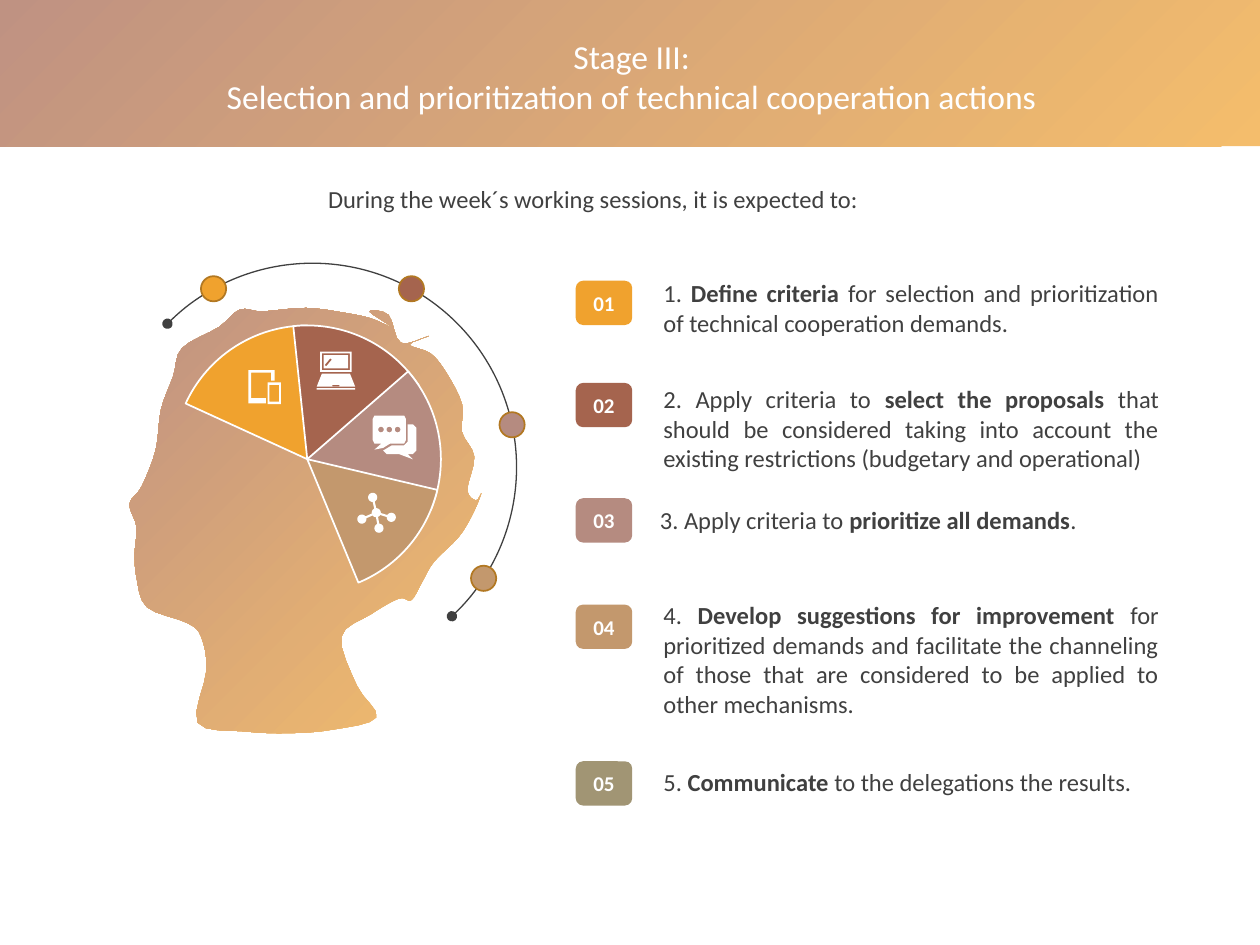
from math import cos, sin, radians

from lxml.etree import SubElement
from pptx import Presentation
from pptx.dml.color import RGBColor
from pptx.enum.shapes import MSO_SHAPE as Kind
from pptx.enum.text import MSO_ANCHOR as Anchor, MSO_AUTO_SIZE as Fit, PP_ALIGN as Align
from pptx.oxml.ns import qn
from pptx.util import Pt

GOLD = RGBColor(0xF0, 0xA2, 0x2E)
RUST = RGBColor(0xA5, 0x64, 0x4E)
ROSE = RGBColor(0xB5, 0x8B, 0x80)
TAN = RGBColor(0xC3, 0x98, 0x6D)
OLIVE = RGBColor(0xA1, 0x95, 0x74)
BRONZE = RGBColor(0xB2, 0x78, 0x22)
GREY = RGBColor(0x40, 0x40, 0x40)
WHITE = RGBColor(0xFF, 0xFF, 0xFF)

HEAD = [
    (74, 288), (81, 278), (89, 257), (92, 234), (99, 215), (104, 199), (125, 187),
    (137, 177), (150, 178), (175, 176), (198, 179), (212, 182), (224, 187),
    (211, 178), (222, 180), (229, 196), (245, 192), (234, 197), (246, 202),
    (255, 213), (264, 231), (264, 247), (271, 261), (267, 280), (272, 286),
    (275, 282), (270, 294), (262, 307), (248, 321), (241, 333), (235, 343),
    (228, 342), (212, 351), (195, 364), (204, 392), (215, 410), (190, 417),
    (165, 419), (140, 418), (113, 413), (118, 383), (115, 364), (107, 356),
    (84, 347), (78, 330), (77, 316), (78, 301)]


def curve(points, steps=4):
    """Round off a closed loop with a spline through its points."""
    loop = []
    for i, (b, c) in enumerate(zip(points, points[1:] + points[:1])):
        a, d = points[i - 1], points[(i + 2) % len(points)]
        for t in (k / steps for k in range(steps)):
            loop.append([q + t / 2 * (r - p + t * (2 * p - 5 * q + 4 * r - s
                                                   + t * (3 * q - 3 * r + s - p)))
                         for p, q, r, s in zip(a, b, c, d)])
    return loop


def polar(x, y, size, angle):
    return x + size * cos(radians(angle)), y + size * sin(radians(angle))


def ring(x, y, size):
    return [polar(x, y, size, angle) for angle in range(0, 360, 15)]


def box(left, top, wide, high):
    right, low = left + wide, top + high
    return [(left, top), (right, top), (right, low), (left, low)]


def link(x, y, angle, near, far):
    """Thin bar that points away from a centre."""
    return [polar(*polar(x, y, size, angle), 0.6, angle + turn)
            for size, turn in ((near, 90), (far, 90), (far, -90), (near, -90))]


class Deck:
    font = "Calibri"

    def __init__(self):
        self.file = Presentation()
        self.file.slide_width, self.file.slide_height = Pt(720), Pt(540)
        self.slide = self.file.slides.add_slide(self.file.slide_layouts[5])
        self.shapes = self.slide.shapes

    def paint(self, shape, fill=None, line=None, width=1):
        shape.shadow.inherit = False
        if fill is None:
            shape.fill.background()
        else:
            shape.fill.solid()
            shape.fill.fore_color.rgb = fill
        if line is None:
            shape.line.fill.background()
        else:
            shape.line.color.rgb = line
            shape.line.width = Pt(width)
        return shape

    def blend(self, shape):
        """Fill with the slanted, partly clear gold to rust gradient."""
        shape.fill.gradient()
        shape.fill.gradient_angle = 135
        for stop, tone in zip(shape.fill.gradient_stops, (GOLD, RUST)):
            stop.color.rgb = tone
        for tone in shape.element.spPr.find(qn("a:gradFill")).iter(qn("a:srgbClr")):
            SubElement(tone, qn("a:alpha"), val="70000")

    def form(self, kind, left, top, wide, high, *style):
        shape = self.shapes.add_shape(kind, Pt(left), Pt(top), Pt(wide), Pt(high))
        return self.paint(shape, *style)

    def disc(self, kind, x, y, size, *style):
        """Add a round shape by its centre and radius."""
        return self.form(kind, x - size, y - size, 2 * size, 2 * size, *style)

    def sweep(self, shape, start, end):
        """Set the start and end angles, clockwise in degrees."""
        shape.adjustments[0], shape.adjustments[1] = start * 0.6, end * 0.6

    def trace(self, *loops):
        """Draw closed loops as one white shape; inner loops are holes."""
        loops = [[(Pt(x), Pt(y)) for x, y in loop] for loop in loops]
        pen = self.shapes.build_freeform(*loops[0][0], scale=1)
        for i, loop in enumerate(loops):
            if i:
                pen.move_to(*loop[0])
            pen.add_line_segments(loop[1:], close=True)
        return self.paint(pen.convert_to_shape(), WHITE)

    def style(self, frame, size, tone, align):
        for para in frame.paragraphs:
            para.alignment = align
            for run in para.runs:
                run.font.name, run.font.size = self.font, Pt(size)
                run.font.color.rgb = tone

    def band(self):
        shape = self.form(Kind.RECTANGLE, 0, 0, 720, 83.5)
        self.blend(shape)
        self.shapes.element.insert(2, shape.element)  # behind the title

    def title(self, text):
        shape = self.shapes.title
        shape.left, shape.top, shape.width, shape.height = Pt(19.5), Pt(15), Pt(683), Pt(57)
        frame = shape.text_frame
        frame.text = text
        frame.auto_size, frame.vertical_anchor = Fit.NONE, Anchor.MIDDLE
        self.style(frame, 19.2, WHITE, Align.CENTER)

    def text(self, left, top, wide, rows, parts, align=Align.LEFT):
        """Add a text box; every second part is bold."""
        frame = self.shapes.add_textbox(Pt(left), Pt(top), Pt(wide),
                                        Pt(7 + 17 * rows)).text_frame
        frame.word_wrap = True
        for i, part in enumerate(parts):
            run = frame.paragraphs[0].add_run()
            run.text, run.font.bold = part, i % 2 == 1
        self.style(frame, 14, GREY, align)

    def badge(self, left, top, label, tone):
        frame = self.form(Kind.ROUNDED_RECTANGLE, left, top, 32.3, 25.3, tone).text_frame
        frame.text, frame.vertical_anchor = label, Anchor.MIDDLE
        self.style(frame, 12, WHITE, Align.CENTER)
        frame.paragraphs[0].runs[0].font.bold = True

    def orbit(self, x, y, size):
        arc = self.disc(Kind.ARC, x, y, size, None, GREY, 0.75)
        self.sweep(arc, 224.7, 46.9)
        for end in ("a:headEnd", "a:tailEnd"):
            SubElement(arc.element.spPr.find(qn("a:ln")), qn(end), type="oval")

    def laptop(self, x, y):
        keys = [(x + 3, y + 12.5), (x + 19, y + 12.5), (x + 22, y + 20), (x, y + 20)]
        screen = [box(x + 2 + i, y + i, 18 - 2 * i, 11.5 - 2 * i) for i in range(3)]
        glare = link(x + 5, y + 8, -50, 0, 5)
        self.trace(*screen, glare, keys, box(x + 9, y + 19, 4, 0.8),
                   box(x, y + 20.8, 22, 0.8))

    def tablet(self, x, y):
        case = [(0, 0), (15, 0), (15, 6), (13, 6), (13, 1.5), (1.5, 1.5),
                (1.5, 16), (10, 16), (10, 19), (0, 19)]
        self.trace([(x + a, y + b) for a, b in case],
                   box(x + 11, y + 7, 7.5, 12.5), box(x + 12, y + 8.5, 5.5, 9.5))

    def chat(self, x, y):
        front = [(1, 0), (18, 0), (19, 2), (19, 14), (18, 16), (10, 16), (6, 18.5),
                 (1, 19.5), (5, 16), (1, 16), (0, 14), (0, 2)]
        back = [(20, 5), (23, 5), (25, 7), (25, 20), (23, 22), (20, 22), (23, 25),
                (15, 22), (8, 22), (6, 20), (11, 17), (18, 17), (20, 15)]
        self.trace(*[[(x + a, y + b) for a, b in loop] for loop in (front, back)],
                   *[ring(x + 4.75 * i, y + 8, 1.6) for i in (1, 2, 3)])

    def net(self, x, y):
        turns = (17, 80, 156, 257)
        self.trace(ring(x, y, 2.6), *[ring(*polar(x, y, 9, turn), 2.6) for turn in turns],
                   *[link(x, y, turn, 2.5, 6.5) for turn in turns])


def main():
    deck = Deck()
    deck.band()
    deck.title("Stage III:\nSelection and prioritization of technical cooperation actions")
    deck.blend(deck.trace(curve(HEAD)))

    sectors = [(GOLD, 204.6, 270, 241), (RUST, 264, 326.5, 299),
               (ROSE, 319, 22.3, 348), (TAN, 13.3, 67.5, 33)]
    for tone, start, end, _ in sectors:
        deck.sweep(deck.disc(Kind.PIE, 175.6, 262.4, 76.4, tone, WHITE), start, end)
    path_mid, reach = (178.6, 267), 116.6
    deck.orbit(*path_mid, reach)
    for tone, _, _, turn in sectors:
        deck.disc(Kind.OVAL, *polar(*path_mid, reach, turn), 7.2, tone, BRONZE)

    deck.laptop(181, 201)
    deck.tablet(142, 211.5)
    deck.chat(213, 237.5)
    deck.net(215, 293)

    items = [
        (155.5, 2, 160.4, GOLD, "1. ", "Define criteria ",
         "for selection and prioritization of technical cooperation demands."),
        (216, 3, 218.8, RUST, "2. Apply criteria to ", "select the proposals ",
         "that should be considered taking into account the existing restrictions "
         "(budgetary and operational)"),
        (285.2, 1, 284.7, ROSE, "3. Apply criteria to ", "prioritize all demands", "."),
        (339.6, 4, 345.5, TAN, "4. ", "Develop suggestions for improvement ",
         "for prioritized demands and facilitate the channeling of those that are "
         "considered to be applied to other mechanisms."),
        (434.6, 1, 435, OLIVE, "5. ", "Communicate ", "to the delegations the results.")]
    for i, (top, rows, level, tone, *parts) in enumerate(items, 1):
        side, align = (370, Align.LEFT) if i == 3 else (372, Align.JUSTIFY)
        deck.text(side, top, 297.3, rows, parts, align)
        deck.badge(329, level, f"{i:02}", tone)
    deck.text(180.4, 101.5, 479.5, 1,
              ["During the week´s working sessions, it is expected to:"])
    deck.file.save("out.pptx")


if __name__ == "__main__":
    main()
